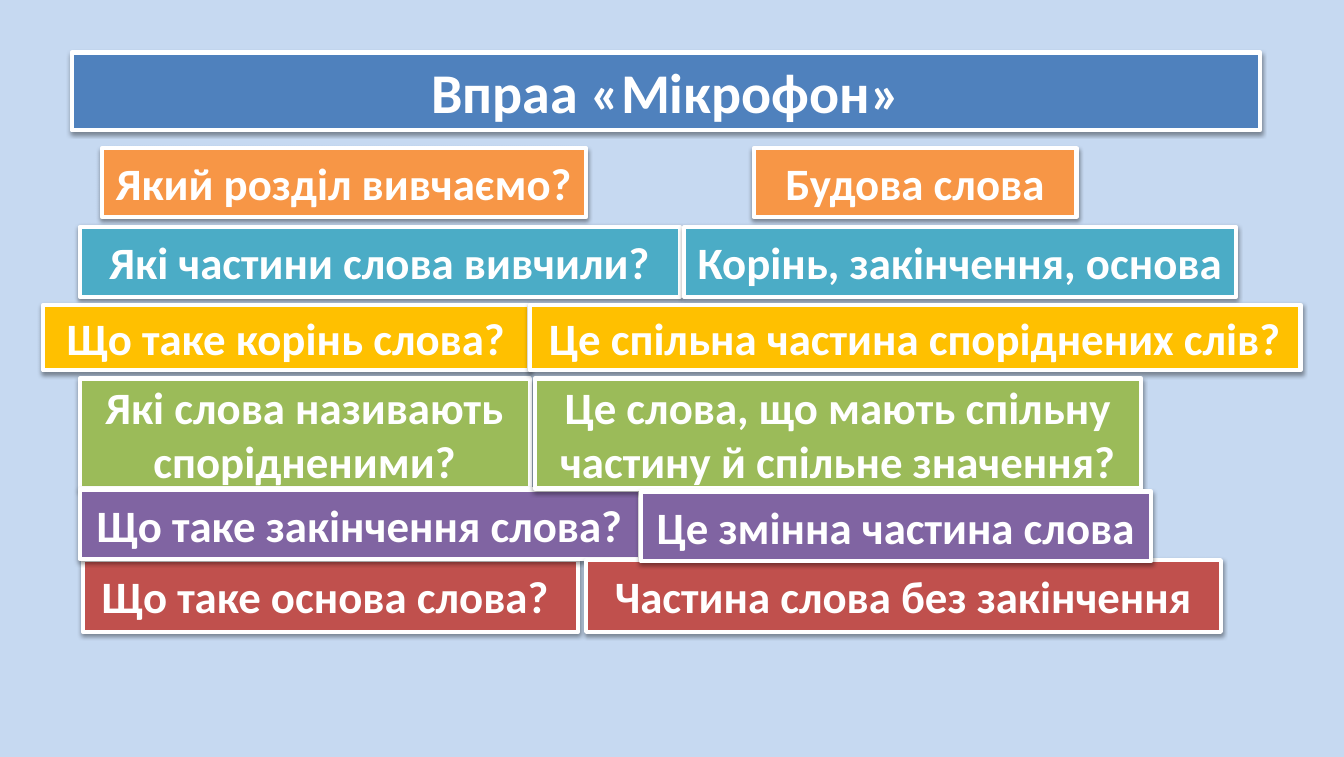
from lxml.etree import SubElement
from pptx import Presentation
from pptx.dml.color import RGBColor
from pptx.enum.shapes import MSO_SHAPE
from pptx.enum.text import MSO_ANCHOR, PP_ALIGN
from pptx.oxml.ns import qn
from pptx.util import Inches, Pt


def color(value):
    return RGBColor.from_string(value)


def add_card(s, left, top, width, height, fill, text, size=32, inset=0.12):
    sp = s.shapes.add_shape(MSO_SHAPE.RECTANGLE, Inches(left), Inches(top),
                            Inches(width), Inches(height))
    sp.fill.solid()
    sp.fill.fore_color.rgb = color(fill)
    sp.line.color.rgb = color("FFFFFF")
    sp.line.width = Pt(3)
    sp.shadow.inherit = False
    effects = sp._element.spPr.find(qn("a:effectLst"))
    shadow = SubElement(effects, qn("a:outerShdw"), blurRad="40000",
                        dist="20000", dir="5400000", rotWithShape="0")
    black = SubElement(shadow, qn("a:srgbClr"), val="000000")
    SubElement(black, qn("a:alpha"), val="38000")
    tf = sp.text_frame
    frame = {"word_wrap": True, "vertical_anchor": MSO_ANCHOR.MIDDLE,
             "margin_left": Inches(inset), "margin_right": Inches(inset),
             "margin_top": Inches(inset / 2), "margin_bottom": Inches(inset / 2)}
    for name, value in frame.items():
        setattr(tf, name, value)
    p = tf.paragraphs[0]
    p.alignment = PP_ALIGN.CENTER
    r = p.add_run()
    r.text = text
    for name, value in {"name": "Calibri", "size": Pt(size), "bold": True}.items():
        setattr(r.font, name, value)
    r.font.color.rgb = color("FFFFFF")


prs = Presentation()
prs.slide_width = Inches(13.32)
prs.slide_height = Inches(7.5)
s = prs.slides.add_slide(prs.slide_layouts[6])
s.background.fill.solid()
s.background.fill.fore_color.rgb = color("C6D9F1")

questions = [
    (1.01, 1.47, 4.8, 0.68, "F79646", "Який розділ вивчаємо?"),
    (0.79, 2.25, 5.95, 0.69, "4BACC6", "Які частини слова вивчили?"),
    (0.43, 3.02, 4.81, 0.65, "FFC000", "Що таке корінь слова?"),
    (0.79, 3.75, 4.46, 1.09, "9BBB59", "Які слова називають спорідненими?"),
    (0.82, 5.55, 4.91, 0.71, "C0504D", "Що таке основа слова? "),
    (0.79, 4.85, 5.55, 0.69, "8064A2", "Що таке закінчення слова?"),
]
answers = [
    (7.47, 1.47, 3.2, 0.68, "F79646", "Будова слова"),
    (6.78, 2.25, 5.47, 0.69, "4BACC6", "Корінь, закінчення, основа"),
    (5.25, 3.02, 7.64, 0.65, "FFC000", "Це спільна частина споріднених слів?"),
    (5.3, 3.75, 6.01, 1.09, "9BBB59",
     "Це слова, що мають спільну частину й спільне значення?"),
    (5.81, 5.55, 6.29, 0.71, "C0504D", "Частина слова без закінчення"),
    (6.35, 4.87, 5.06, 0.69, "8064A2", "Це змінна частина слова"),
]

add_card(s, 0.71, 0.52, 11.78, 0.77, "4F81BD", "Впраа «Мікрофон»", size=40, inset=0.1)
for card in questions + answers:
    add_card(s, *card)

prs.save("out.pptx")
